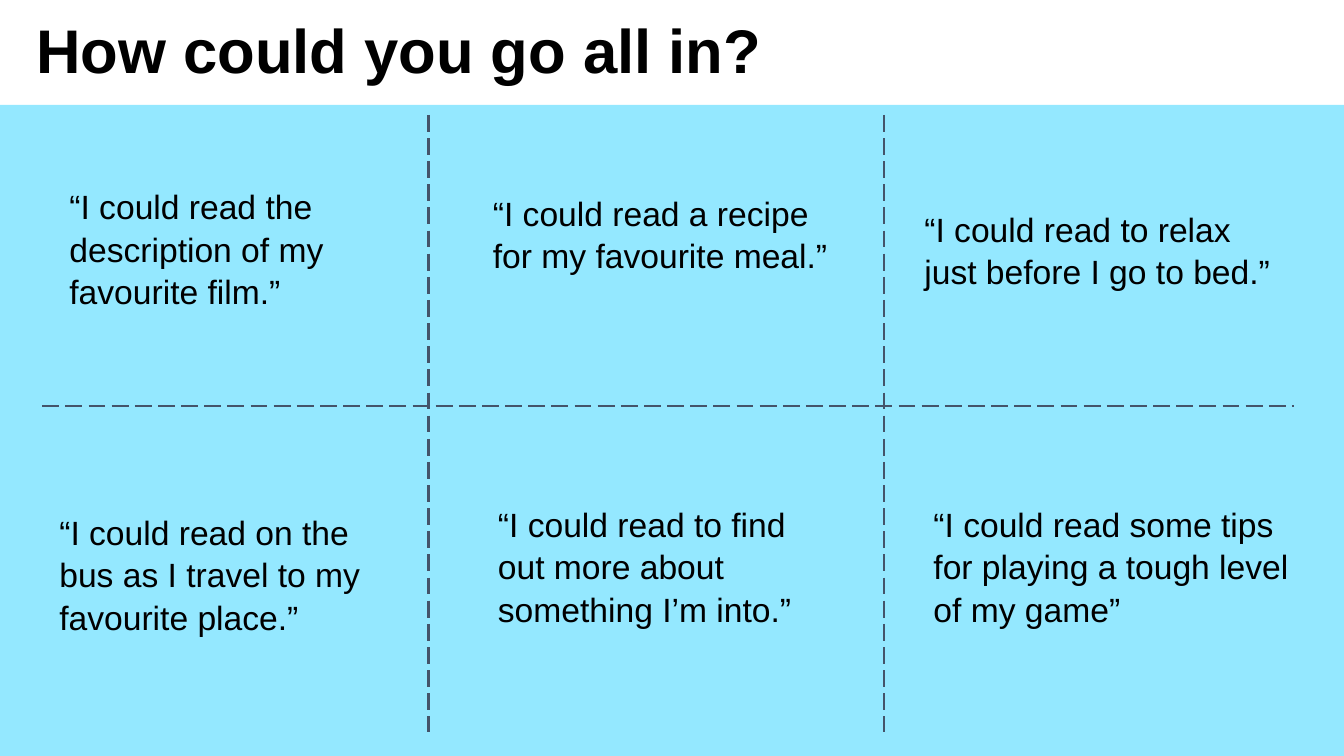
from lxml import etree
from pptx import Presentation
from pptx.dml.color import RGBColor as RGB
from pptx.enum.dml import MSO_LINE_DASH_STYLE as DASH
from pptx.enum.shapes import MSO_CONNECTOR as LINK, MSO_SHAPE as SHAPE
from pptx.oxml.ns import qn
from pptx.util import Inches, Pt

HUES = {"panel": "94E8FF", "rule": "44546A", "ink": "000000"}

deck = Presentation()
deck.slide_width, deck.slide_height = Inches(13.33), Inches(7.5)
slide = deck.slides.add_slide(deck.slide_layouts[6])


def add_text(words, spot, size, gap, bold=False):
    box = slide.shapes.add_textbox(*[Inches(n) for n in spot])
    box.text_frame.word_wrap = True
    para = box.text_frame.paragraphs[0]
    para.text = words
    para.line_spacing = gap
    font = para.font
    font.name, font.size, font.bold = "Arial", Pt(size), bold
    font.color.rgb = RGB.from_string(HUES["ink"])


# Title
add_text("How could you go all in?", (0.26, 0, 8.21, 1.58), 44, 1.1, True)

# Blue panel
panel = slide.shapes.add_shape(
    SHAPE.RECTANGLE, 0, Inches(1.04), Inches(13.33), Inches(6.66))
panel.shadow.inherit = False
panel.fill.solid()
panel.fill.fore_color.rgb = RGB.from_string(HUES["panel"])
panel.line.fill.background()

# Reading ideas
ideas = [
    ("“I could read the description of my favourite film.”",
     (0.59, 1.78, 3.39, 1.89)),
    ("“I could read a recipe for my favourite meal.”",
     (4.79, 1.84, 3.62, 1.16)),
    ("“I could read to relax just before I go to bed.”",
     (9.07, 2, 3.75, 1.45)),
    ("“I could read on the bus as I travel to my favourite place.”",
     (0.49, 5.01, 3.58, 1.82)),
    ("“I could read to find out more about something I’m into.”",
     (4.84, 4.93, 3.55, 1.57)),
    ("“I could read some tips for playing a tough level of my game”",
     (9.16, 4.93, 3.98, 1.82)),
]
for words, spot in ideas:
    add_text(words, spot, 24, 1.05)

# Dashed dividers
rules = [(0.42, 4.03, 12.83, 4.03)]
rules += [(x, 1.14, x, 7.26) for x in (4.25, 8.77)]
for ends in rules:
    rule = slide.shapes.add_connector(
        LINK.STRAIGHT, *[Inches(n) for n in ends])
    rule.line.color.rgb = RGB.from_string(HUES["rule"])
    rule.line.width = Pt(1.5)
    rule.line.dash_style = DASH.LONG_DASH
    etree.SubElement(rule._element.spPr, qn("a:effectLst"))

deck.save("out.pptx")
